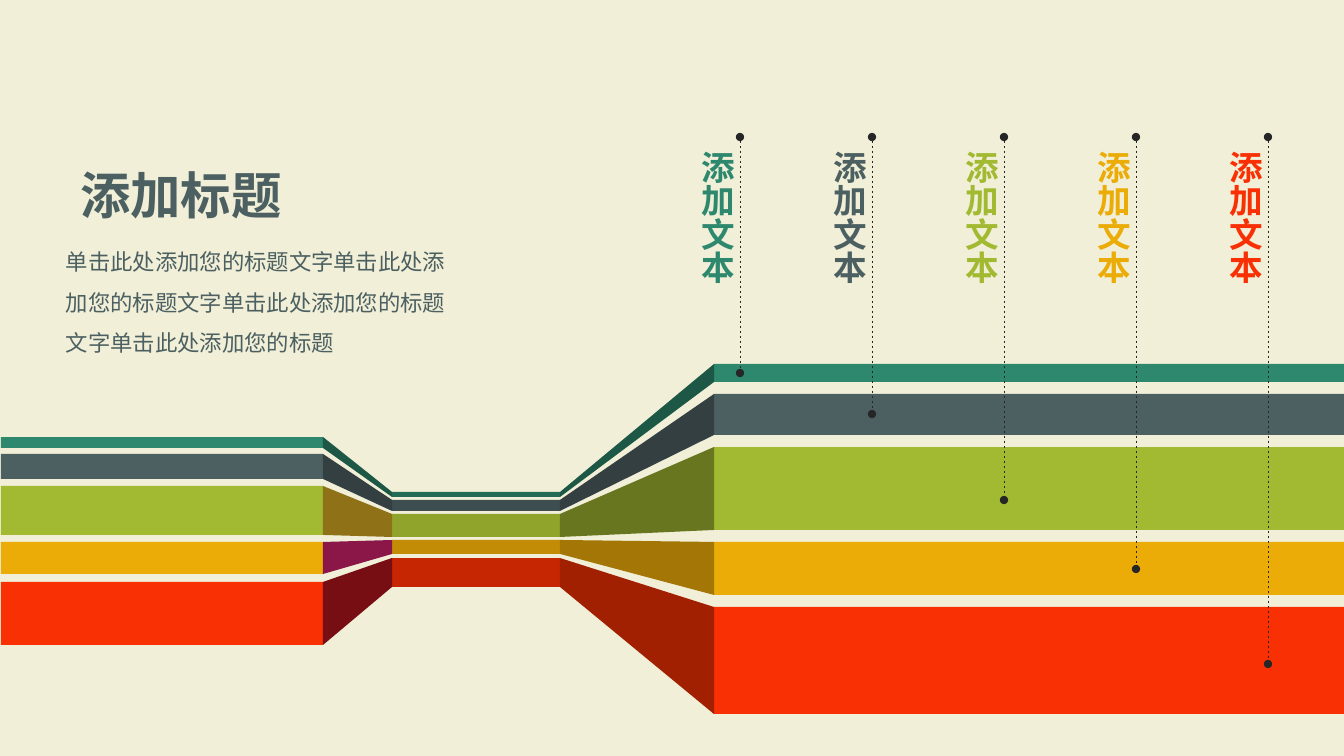
from dataclasses import dataclass

from lxml.etree import SubElement
from pptx import Presentation
from pptx.dml.color import RGBColor as RGB
from pptx.enum.dml import MSO_LINE_DASH_STYLE as DASH
from pptx.enum.shapes import MSO_CONNECTOR as CONN, MSO_SHAPE as SHAPE
from pptx.enum.text import MSO_AUTO_SIZE as FIT, PP_ALIGN as ALIGN
from pptx.oxml.ns import qn
from pptx.util import Emu, Pt

PX = 914400 / 100.8


@dataclass(frozen=True)
class Theme:
    bg: str = "F1EFD7"
    ink: str = "4C6062"
    pointer: str = "262626"
    font: str = "Noto Sans CJK SC"
    title: int = 36
    label: int = 24
    body: int = 16
    hairline: float = 0.5
    bands: tuple = ("2D886E", "4C6062", "A2B932", "EBAC07", "F83003")
    waist: tuple = ("236B56", "3E4E50", "90A42C", "C28C06", "C62702")
    narrowing: tuple = ("1D5746", "333F41", "8F7117", "8A1748", "770E13")
    widening: tuple = ("1D5746", "333F41", "687620", "A37605", "A22002")


THEME = Theme()

LEFT_X, NARROW_X, WAIST_X, WIDEN_X, RIGHT_X = 1, 323, 392, 560, 714
SLIDE_W, SLIDE_H = 1344, 756
LEFT_SPANS = ((437, 448), (454, 479), (486, 535), (542, 574), (582, 645))
WAIST_SPANS = ((492, 497), (500, 511), (514, 537), (540, 554), (558, 587))
RIGHT_SPANS = ((364, 382), (394, 435), (447, 530), (542, 595), (607, 714))

POINTER_X, POINTER_TOP, POINTER_STEP = 740, 137, 132
POINTER_ENDS = (373, 414, 500, 569, 664)
LABEL_X, LABEL_Y, LABEL_W, LABEL_H = 679, 133, 61, 175

TITLE = "添加标题"
BODY = "单击此处添加您的标题文字单击此处添加您的标题文字单击此处添加您的标题文字单击此处添加您的标题"
LABEL = " 添加文本"


def px(*values):
    return [Emu(round(v * PX)) for v in values]


def apply(obj, fmt):
    for name, value in fmt.items():
        setattr(obj, name, value)


def paint(sp, color):
    sp.shadow.inherit = False
    sp.fill.solid()
    sp.fill.fore_color.rgb = RGB.from_string(color)
    sp.line.fill.background()


def add_band(s, x1, x2, span, color):
    top, bottom = span
    sp = s.shapes.add_shape(SHAPE.RECTANGLE, *px(x1, top, x2 - x1, bottom - top))
    paint(sp, color)


def add_fold(s, x1, x2, span1, span2, color):
    fb = s.shapes.build_freeform(x1, span1[0], scale=PX)
    fb.add_line_segments([(x2, span2[0]), (x2, span2[1]), (x1, span1[1])])
    paint(fb.convert_to_shape(), color)


def add_pointer(s, x, bottom):
    cx = s.shapes.add_connector(CONN.STRAIGHT, *px(x, POINTER_TOP, x, bottom))
    apply(cx.line, {"width": Pt(THEME.hairline), "dash_style": DASH.DASH})
    cx.line.color.rgb = RGB.from_string(THEME.pointer)
    ln = cx.line._get_or_add_ln()
    for end in ("a:headEnd", "a:tailEnd"):
        SubElement(ln, qn(end), type="oval")
    SubElement(cx._element.spPr, qn("a:effectLst"))


def add_text(s, box, text, size, color, bold=False, para=None, vert=None):
    sp = s.shapes.add_textbox(*px(*box))
    tf = sp.text_frame
    apply(tf, {"word_wrap": True, "auto_size": FIT.SHAPE_TO_FIT_TEXT})
    if vert:
        tf._txBody.bodyPr.set("vert", vert)
    p = tf.paragraphs[0]
    apply(p, para or {})
    r = p.add_run()
    r.text = text
    apply(r.font, {"name": THEME.font, "size": Pt(size), "bold": bold})
    r.font.color.rgb = RGB.from_string(color)
    SubElement(r._r.get_or_add_rPr(), qn("a:ea"), typeface=THEME.font)


def add_ribbons(s):
    for x1, x2, spans, colors in (
        (RIGHT_X, SLIDE_W, RIGHT_SPANS, THEME.bands),
        (WAIST_X, WIDEN_X, WAIST_SPANS, THEME.waist),
        (LEFT_X, NARROW_X, LEFT_SPANS, THEME.bands),
    ):
        for span, color in zip(spans, colors):
            add_band(s, x1, x2, span, color)
    for x1, x2, starts, ends, colors in (
        (WIDEN_X, RIGHT_X, WAIST_SPANS, RIGHT_SPANS, THEME.widening),
        (NARROW_X, WAIST_X, LEFT_SPANS, WAIST_SPANS, THEME.narrowing),
    ):
        for start, end, color in zip(starts, ends, colors):
            add_fold(s, x1, x2, start, end, color)


def main():
    prs = Presentation()
    prs.slide_width, prs.slide_height = px(SLIDE_W, SLIDE_H)
    s = prs.slides.add_slide(prs.slide_layouts[6])
    s.background.fill.solid()
    s.background.fill.fore_color.rgb = RGB.from_string(THEME.bg)

    add_ribbons(s)
    centred = {"alignment": ALIGN.CENTER}
    for i, (bottom, color) in enumerate(zip(POINTER_ENDS, THEME.bands)):
        shift = i * POINTER_STEP
        add_pointer(s, POINTER_X + shift, bottom)
        add_text(s, (LABEL_X + shift, LABEL_Y, LABEL_W, LABEL_H), LABEL,
                 THEME.label, color, True, centred, "eaVert")
    add_text(s, (56, 159, 250, 72), TITLE, THEME.title, THEME.ink, True, centred)
    add_text(s, (56, 230, 417, 132), BODY, THEME.body, THEME.ink,
             para={"line_spacing": 1.5})
    prs.save("out.pptx")


if __name__ == "__main__":
    main()
